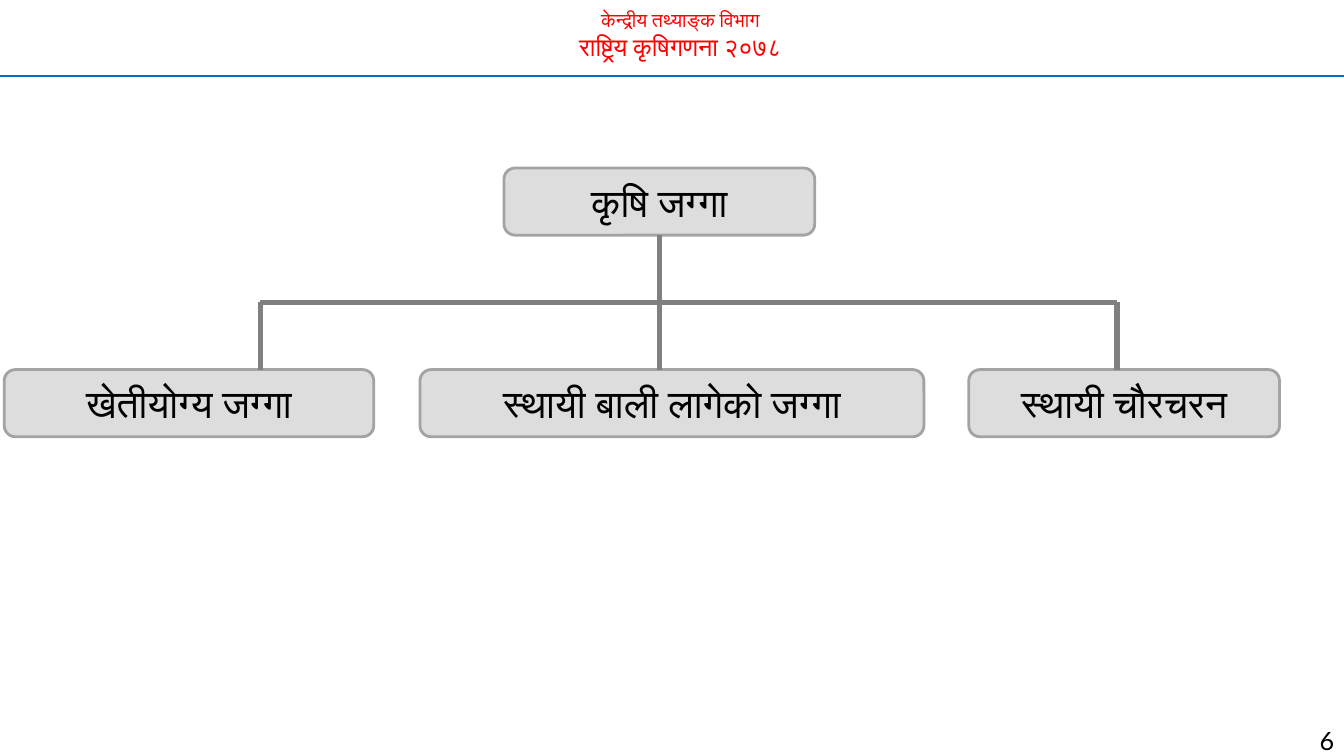
from lxml.etree import SubElement
from pptx import Presentation
from pptx.dml.color import RGBColor
from pptx.enum.shapes import MSO_CONNECTOR as Connector, MSO_SHAPE as Shape
from pptx.enum.text import MSO_ANCHOR as Anchor, MSO_AUTO_SIZE as AutoSize, PP_ALIGN as Align
from pptx.oxml.ns import qn
from pptx.util import Pt

SLIDE_WIDTH, SLIDE_HEIGHT = 960, 540
BOX_HEIGHT = 48
ROOT_TOP, BRANCH_Y, CHILD_TOP = 120, 216, 264
TRUNK_X = 471

# Child boxes: text, left, width, x of the line that reaches the box
CHILDREN = [
    ("खेतीयोग्य जग्गा", 3, 264, 186),
    ("स्थायी बाली लागेको जग्गा", 300, 360, TRUNK_X),
    ("स्थायी चौरचरन", 692, 222, 798),
]


def color(hex_string):
    return RGBColor.from_string(hex_string)


def write(paragraph, text, size=18, font="Roboto", fill="000000",
          align=Align.CENTER, spacing=1.0):
    paragraph.alignment = align
    paragraph.line_spacing = spacing
    run = paragraph.add_run()
    run.text = text
    run.font.size = Pt(size)
    run.font.name = font
    run.font.color.rgb = color(fill)
    # Devanagari takes its font from the complex-script slot
    SubElement(run.font._element, qn("a:cs"), typeface=font)


def add_header(slide):
    title = slide.shapes.title
    title.left, title.top, title.width, title.height = Pt(86), Pt(2), Pt(800), Pt(46)
    frame = title.text_frame
    frame.word_wrap = True
    frame.auto_size = AutoSize.NONE
    frame.vertical_anchor = Anchor.TOP
    write(frame.paragraphs[0], "केन्द्रीय तथ्याङ्क विभाग", size=14, font="Calibri", fill="FF0000")
    write(frame.add_paragraph(), "राष्ट्रिय कृषिगणना २०७८", size=18, font="Calibri", fill="FF0000")


def add_line(slide, x1, y1, x2, y2, stroke="808080", weight=4):
    line = slide.shapes.add_connector(Connector.STRAIGHT, Pt(x1), Pt(y1), Pt(x2), Pt(y2))
    line.line.color.rgb = color(stroke)
    line.line.width = Pt(weight)
    SubElement(line._element.spPr, qn("a:effectLst"))


def add_box(slide, text, left, top, width):
    box = slide.shapes.add_shape(Shape.ROUNDED_RECTANGLE, Pt(left), Pt(top),
                                 Pt(width), Pt(BOX_HEIGHT))
    box.shadow.inherit = False
    box.fill.solid()
    box.fill.fore_color.rgb = color("DDDDDD")
    box.line.color.rgb = color("A3A3A3")
    box.line.width = Pt(2)
    frame = box.text_frame
    frame.word_wrap = True
    frame.vertical_anchor = Anchor.MIDDLE
    write(frame.paragraphs[0], text, size=28)


def add_page_number(slide, number):
    box = slide.shapes.add_textbox(Pt(886), Pt(504), Pt(74), Pt(30))
    box.text_frame.word_wrap = True
    write(box.text_frame.paragraphs[0], number, font="Lato", align=Align.RIGHT, spacing=1.5)


def main():
    presentation = Presentation()
    presentation.slide_width, presentation.slide_height = Pt(SLIDE_WIDTH), Pt(SLIDE_HEIGHT)
    slide = presentation.slides.add_slide(presentation.slide_layouts[5])

    # Header with its rule
    add_header(slide)
    add_line(slide, 0, 54, SLIDE_WIDTH, 54, stroke="0070C0", weight=1.5)

    # Boxes of the tree
    add_box(slide, "कृषि जग्गा", 360, ROOT_TOP, 222)
    for text, left, width, _ in CHILDREN:
        add_box(slide, text, left, CHILD_TOP, width)

    # Trunk, branch and drops
    add_line(slide, TRUNK_X, ROOT_TOP + BOX_HEIGHT, TRUNK_X, BRANCH_Y)
    drops = [child[-1] for child in CHILDREN]
    add_line(slide, drops[0], BRANCH_Y, drops[-1], BRANCH_Y)
    for x in drops:
        add_line(slide, x, BRANCH_Y, x, CHILD_TOP)

    add_page_number(slide, "6")
    presentation.save("out.pptx")


if __name__ == "__main__":
    main()
